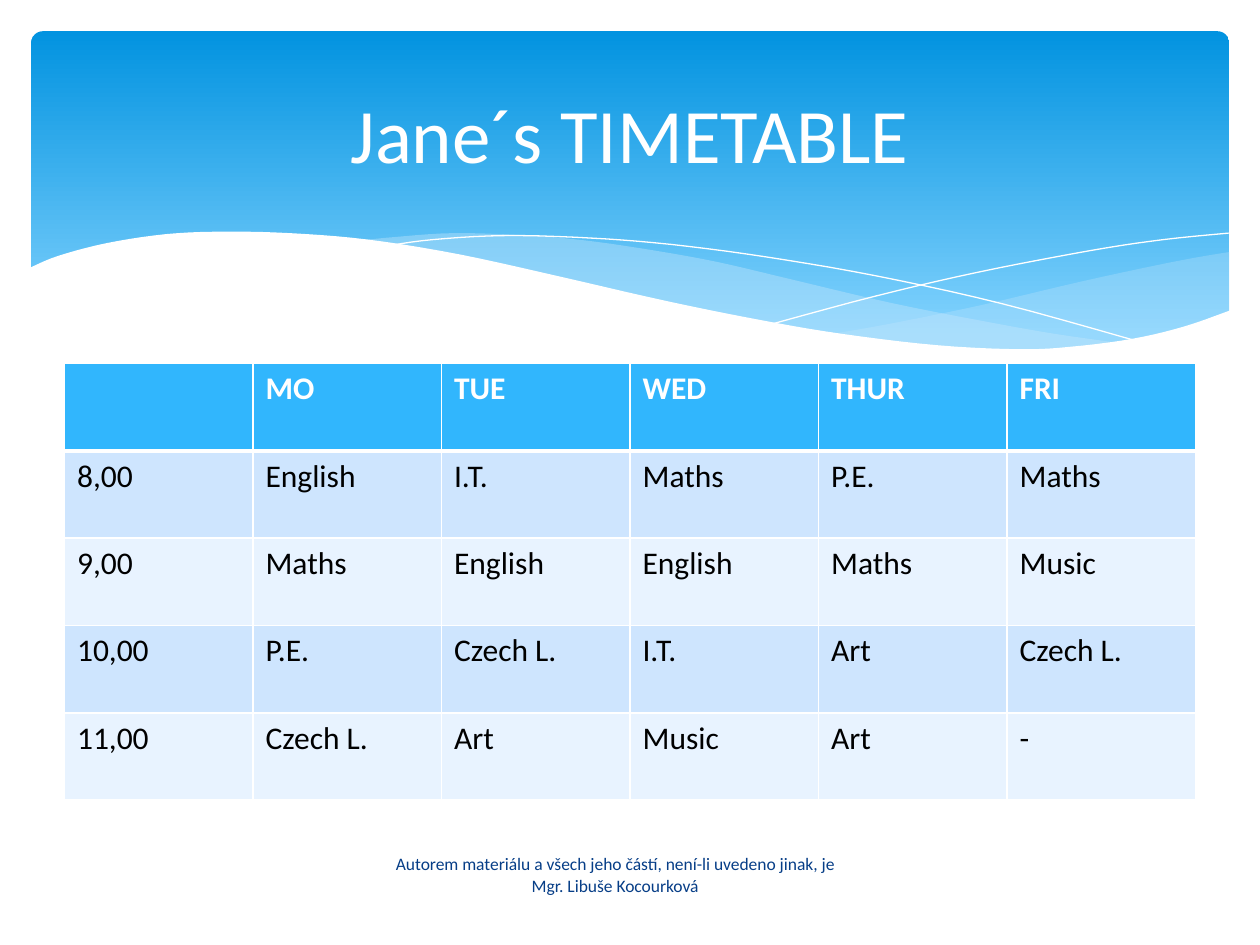
"""Build a school timetable slide with a wavy blue banner."""
from lxml import etree
from pptx import Presentation
from pptx.dml.color import RGBColor
from pptx.enum.shapes import MSO_SHAPE
from pptx.enum.text import MSO_ANCHOR, MSO_AUTO_SIZE, PP_ALIGN
from pptx.oxml.ns import qn
from pptx.util import Cm, Pt

ROUNDED = MSO_SHAPE.ROUNDED_RECTANGLE
MIDDLE = MSO_ANCHOR.MIDDLE
CENTER = PP_ALIGN.CENTER
NO_AUTOFIT = MSO_AUTO_SIZE.NONE
FONT = "Calibri"
WHITE, BLACK, NAVY = "FFFFFF", "000000", "073E87"
HEADER_FILL, ROW_FILLS = "31B6FD", ("CEE5FE", "E8F3FF")
BANNER_STOPS = ((0, "0293E0"), (0.9, "83D3FE"))
WAVE_FILL = "C6E7FC"

TITLE = "Jane´s TIMETABLE"
FOOTER = ("Autorem materiálu a všech jeho částí, není-li uvedeno jinak, je "
          "Mgr. Libuše Kocourková")
TIMETABLE = (
    ("", "MO", "TUE", "WED", "THUR", "FRI"),
    ("8,00", "English", "I.T.", "Maths", "P.E.", "Maths"),
    ("9,00", "Maths", "English", "English", "Maths", "Music"),
    ("10,00", "P.E.", "Czech L.", "I.T.", "Art", "Czech L."),
    ("11,00", "Czech L.", "Art", "Music", "Art", "-"),
)
TABLE_LEFT, TABLE_TOP = 1.3, 7.33
COLUMN_WIDTH, ROW_HEIGHT = 3.8, 1.76

RIGHT_WAVE = (
    ((24.79, 5.08), (23.75, 5.26), (21.87, 5.66), (19.79, 6.15), (17.93, 6.53),
     (16.79, 6.73)),
    ((16.79, 6.73), (18.26, 6.91), (19.53, 7.04), (20.68, 7.06), (21.92, 6.99),
     (22.99, 6.83), (23.93, 6.58), (24.79, 6.27)),
)
MIDDLE_WAVE = (
    ((22.68, 6.93), (21.26, 6.73), (19.69, 6.45), (17.93, 6.1), (15.98, 5.64),
     (14.45, 5.28), (13.06, 5.03), (11.81, 4.85), (10.67, 4.75), (9.17, 4.7),
     (7.95, 4.78), (7.26, 4.85)),
    ((7.26, 4.85), (8.69, 5.05), (10.26, 5.36), (11.4, 5.64), (13.46, 6.1),
     (15.27, 6.48), (16.89, 6.76), (18.34, 6.96), (19.63, 7.04), (20.78, 7.06),
     (21.77, 7.04), (22.68, 6.93)),
)
FALLING_LINE = (
    ((7.85, 4.95), (8.74, 4.83), (10.19, 4.75), (11.91, 4.8), (13.54, 4.93),
     (15.44, 5.18), (17.65, 5.56), (20.19, 6.12), (23.04, 6.91)),
)
RISING_LINE = (
    ((15.57, 6.53), (17.65, 5.97), (19.71, 5.49), (22, 5.05), (23.47, 4.83),
     (24.77, 4.7)),
)
WHITE_WAVE = (
    ((24.82, 6.25), (23.88, 6.58), (22.83, 6.83), (21.59, 6.99), (20.55, 7.04),
     (18.9, 6.96), (16.97, 6.73), (15.32, 6.45), (13.44, 6.07), (11.35, 5.59),
     (9.27, 5.13), (7.42, 4.83), (5.84, 4.7), (4.5, 4.67), (3.35, 4.72),
     (2.16, 4.9), (1.17, 5.16), (0.58, 5.41)),
    ((0.58, 8.36), (24.82, 8.36)),
)
WAVES = (
    (RIGHT_WAVE, WAVE_FILL, 29),
    (MIDDLE_WAVE, WAVE_FILL, 40),
    (FALLING_LINE, None, 100),
    (RISING_LINE, None, 100),
    (WHITE_WAVE, WHITE, 100),
)


def color(hex_text):
    return RGBColor.from_string(hex_text)


def smooth(points, steps=5):
    """Return points along a Catmull-Rom curve through the given points."""
    if len(points) < 3:
        return list(points)
    padded = (points[0], *points, points[-1])
    curve = [points[0]]
    for before, start, end, after in zip(padded, padded[1:], padded[2:], padded[3:]):
        for step in range(1, steps + 1):
            t = step / steps
            curve.append(tuple(
                b + (c - a) * t / 2
                + (2 * a - 5 * b + 4 * c - d) * t ** 2 / 2
                + (3 * b - a - 3 * c + d) * t ** 3 / 2
                for a, b, c, d in zip(before, start, end, after)))
    return curve


def add_wave(slide, curves, fill, opacity):
    points = [(Cm(x), Cm(y)) for curve in curves for x, y in smooth(curve)]
    builder = slide.shapes.build_freeform(*points[0], scale=1.0)
    builder.add_line_segments(points[1:], close=fill is not None)
    shape = builder.convert_to_shape()
    shape.shadow.inherit = False
    if fill is None:
        shape.fill.background()
        shape.line.color.rgb = color(WHITE)
        shape.line.width = Pt(0)
        return
    shape.line.fill.background()
    shape.fill.solid()
    shape.fill.fore_color.rgb = color(fill)
    if opacity < 100:
        rgb = shape.element.spPr.find(qn("a:solidFill")).find(qn("a:srgbClr"))
        etree.SubElement(rgb, qn("a:alpha"), val=str(opacity * 1000))


def add_banner(slide):
    banner = slide.shapes.add_shape(ROUNDED, Cm(0.63), Cm(0.63), Cm(24.15), Cm(6.86))
    banner.adjustments[0] = 0.034
    banner.shadow.inherit = False
    banner.line.fill.background()
    banner.fill.gradient()
    banner.fill.gradient_angle = 270
    for stop, (position, hex_text) in zip(banner.fill.gradient_stops, BANNER_STOPS):
        stop.position = position
        stop.color.rgb = color(hex_text)


def write(paragraph, text, size, hex_text, bold=False):
    run = paragraph.add_run()
    run.text = text
    run.font.name = FONT
    run.font.size = Pt(size)
    run.font.bold = bold
    run.font.color.rgb = color(hex_text)


def write_centered(shape, text, size, hex_text):
    frame = shape.text_frame
    frame.word_wrap = True
    frame.auto_size = NO_AUTOFIT
    frame.vertical_anchor = MIDDLE
    frame.paragraphs[0].alignment = CENTER
    write(frame.paragraphs[0], text, size, hex_text)


def set_borders(cell, widths):
    properties = cell._tc.get_or_add_tcPr()
    for side, width in widths.items():
        line = etree.SubElement(properties, qn(f"a:ln{side}"), w=str(Pt(width)))
        fill = etree.SubElement(line, qn("a:solidFill"))
        etree.SubElement(fill, qn("a:srgbClr"), val=WHITE)


def add_timetable(slide):
    rows, columns = len(TIMETABLE), len(TIMETABLE[0])
    table = slide.shapes.add_table(
        rows, columns, Cm(TABLE_LEFT), Cm(TABLE_TOP),
        Cm(COLUMN_WIDTH * columns), Cm(ROW_HEIGHT * rows)).table
    for column in table.columns:
        column.width = Cm(COLUMN_WIDTH)
    for row_index, entries in enumerate(TIMETABLE):
        header = row_index == 0
        table.rows[row_index].height = Cm(ROW_HEIGHT)
        widths = {"L": 1, "R": 1, "T": 3 if row_index == 1 else 1, "B": 3 if header else 1}
        for column_index, entry in enumerate(entries):
            cell = table.cell(row_index, column_index)
            set_borders(cell, widths)
            cell.fill.solid()
            cell.fill.fore_color.rgb = color(
                HEADER_FILL if header else ROW_FILLS[(row_index - 1) % 2])
            if entry:
                write(cell.text_frame.paragraphs[0], entry, 18,
                      WHITE if header else BLACK, header)


def main():
    presentation = Presentation()
    presentation.slide_width, presentation.slide_height = Cm(25.4), Cm(19.05)
    slide = presentation.slides.add_slide(presentation.slide_layouts[5])
    add_banner(slide)
    for wave in WAVES:
        add_wave(slide, *wave)
    add_timetable(slide)
    title = slide.shapes.title
    title.left, title.top, title.width, title.height = Cm(1.27), Cm(0.94), Cm(22.86), Cm(3.48)
    title.element.getparent().append(title.element)
    write_centered(title, TITLE, 44, WHITE)
    footer = slide.shapes.add_textbox(Cm(7.7), Cm(17.12), Cm(9.4), Cm(1.02))
    write_centered(footer, FOOTER, 10, NAVY)
    presentation.save("out.pptx")


if __name__ == "__main__":
    main()
